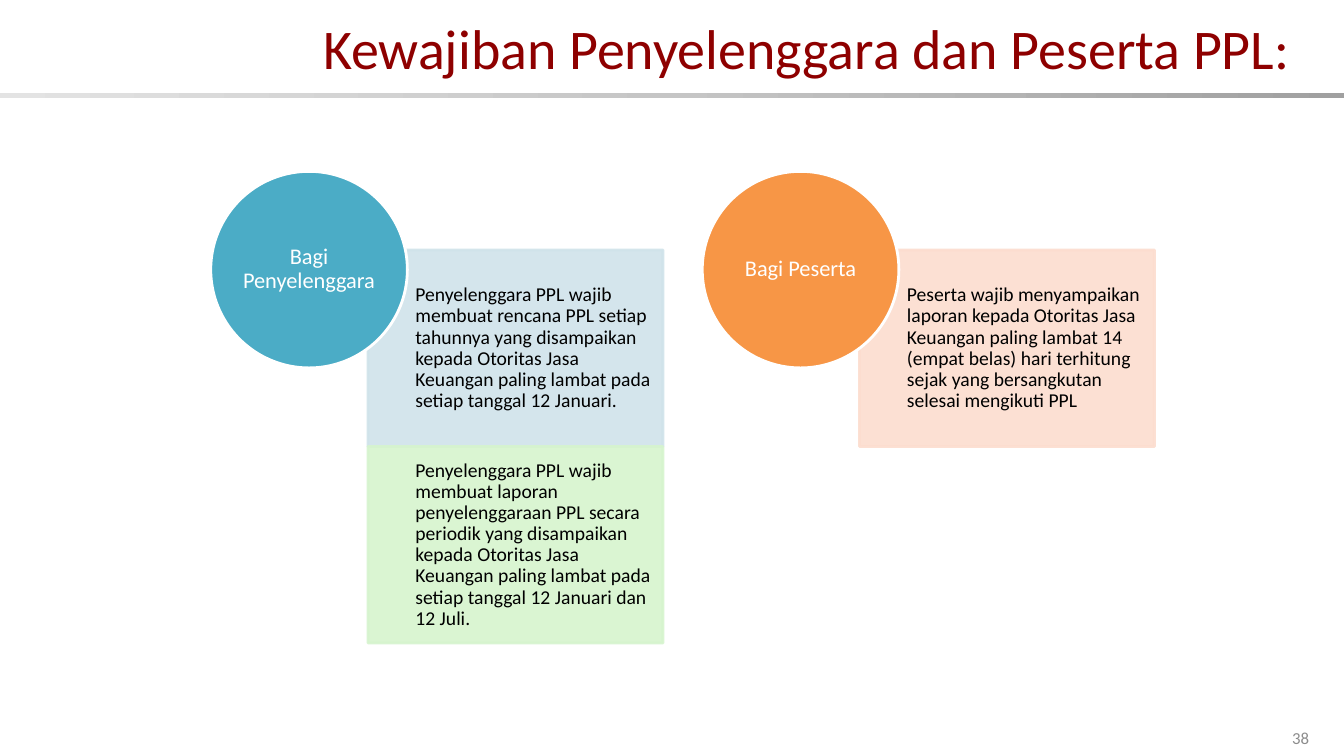
from pptx import Presentation
from pptx.dml.color import RGBColor
from pptx.enum.shapes import MSO_SHAPE
from pptx.enum.text import MSO_ANCHOR, PP_ALIGN
from pptx.oxml.ns import qn
from pptx.oxml.xmlchemy import OxmlElement
from pptx.util import Inches, Pt
from copy import deepcopy

RECTANGLE, OVAL = MSO_SHAPE.RECTANGLE, MSO_SHAPE.OVAL
LEFT, CENTER, RIGHT = PP_ALIGN.LEFT, PP_ALIGN.CENTER, PP_ALIGN.RIGHT
MIDDLE = MSO_ANCHOR.MIDDLE

COLORS = {
    "title": "8E0000", "body": "000000", "white": "FFFFFF", "number": "8C8C8C",
    "bar_dark": "A0A0A0", "bar_mid": "C5C5C5", "bar_light": "E3E3E3",
    "teal": "4BACC6", "orange": "F79646",
    "pale_blue": "D0E3EA", "pale_green": "D6F4CE", "pale_orange": "FCDDCF",
}

DUTIES = [
    ("Bagi Penyelenggara", "teal", [
        ("pale_blue", "Penyelenggara PPL wajib membuat rencana PPL setiap tahunnya yang "
         "disampaikan kepada Otoritas Jasa Keuangan paling lambat pada setiap tanggal "
         "12 Januari."),
        ("pale_green", "Penyelenggara PPL wajib membuat laporan penyelenggaraan PPL secara "
         "periodik yang disampaikan kepada Otoritas Jasa Keuangan paling lambat pada "
         "setiap tanggal 12 Januari dan 12 Juli."),
    ]),
    ("Bagi Peserta", "orange", [
        ("pale_orange", "Peserta wajib menyampaikan laporan kepada Otoritas Jasa Keuangan "
         "paling lambat 14 (empat belas) hari terhitung sejak yang bersangkutan selesai "
         "mengikuti PPL"),
    ]),
]


def color(name):
    return RGBColor.from_string(COLORS[name])


class DutyPage:
    font = "Calibri"
    cell = 1.95            # side of a grid cell, also the circle diameter
    origin = (2.09, 1.7)   # top left corner of the grid

    def __init__(self, deck):
        self.deck = deck
        self.page = deck.slides.add_slide(deck.slide_layouts[6])

    def percent(self, left, top, width, height):
        """Turn percentages of the slide into lengths."""
        across, down = self.deck.slide_width / 100, self.deck.slide_height / 100
        return [int(part) for part in
                (left * across, top * down, width * across, height * down)]

    def grid(self, column, row, columns, rows):
        """Turn grid columns and rows into lengths."""
        return [Inches(part) for part in (
            self.origin[0] + column * self.cell, self.origin[1] + row * self.cell,
            columns * self.cell, rows * self.cell)]

    def add_text(self, box, text, size, ink, align=LEFT, spacing=1.0, insets=None):
        frame = box.text_frame
        frame.word_wrap = True
        frame.vertical_anchor = MIDDLE
        if insets:
            (frame.margin_left, frame.margin_top,
             frame.margin_right, frame.margin_bottom) = map(Inches, insets)
        para = frame.paragraphs[0]
        para.alignment = align
        para.line_spacing = spacing
        span = para.add_run()
        span.text = text
        span.font.name, span.font.size = self.font, Pt(size)
        span.font.color.rgb = color(ink)

    def shape(self, kind, place, fill, line=None, opacity=100):
        box = self.page.shapes.add_shape(kind, *place)
        box.shadow.inherit = False
        box.fill.solid()
        box.fill.fore_color.rgb = color(fill)
        if line:
            box.line.color.rgb = color(line)
            box.line.width = Pt(2)
        else:
            box.line.fill.background()
        if opacity < 100:
            for paint in box._element.spPr.iter(qn("a:srgbClr")):
                alpha = OxmlElement("a:alpha")
                alpha.set("val", str(opacity * 1000))
                paint.append(alpha)
        return box

    def bar(self, place, stops):
        """Draw a strip shaded evenly through three colours, from right to left."""
        box = self.shape(RECTANGLE, place, stops[0])
        box.fill.gradient()
        box.fill.gradient_angle = 180
        first = box._element.spPr.find(".//" + qn("a:gs"))
        first.addnext(deepcopy(first))
        for index, (stop, name) in enumerate(zip(box.fill.gradient_stops, stops)):
            stop.position = index / 2
            stop.color.rgb = color(name)

    def title(self, place, text):
        box = self.page.shapes.add_textbox(*place)
        self.add_text(box, text, 40, "title", RIGHT)

    def panel(self, place, text, fill):
        box = self.shape(RECTANGLE, place, fill, fill, opacity=90)
        self.add_text(box, text, 14, "body", spacing=0.9, insets=(0.47, 0.11, 0.11, 0.11))

    def circle(self, place, text, fill):
        box = self.shape(OVAL, place, fill, "white")
        self.add_text(box, text, 16, "white", CENTER, 0.9, (0, 0, 0, 0))

    def number(self, place, text):
        self.add_text(self.shape(RECTANGLE, place, "white"), text, 12, "number", CENTER)


def main():
    deck = Presentation()
    deck.slide_width, deck.slide_height = Inches(13.33), Inches(7.5)
    sheet = DutyPage(deck)
    sheet.bar(sheet.percent(0, 12.3, 100, 0.7), ("bar_dark", "bar_mid", "bar_light"))
    sheet.title(sheet.percent(15.15, 2.27, 81.55, 7.87),
                "Kewajiban Penyelenggara dan Peserta PPL:")
    for group, (heading, fill, panels) in enumerate(DUTIES):
        column = group * 2.5
        for row, (tint, text) in enumerate(panels):
            sheet.panel(sheet.grid(column + 0.8, row + 0.4, 1.5, 1), text, tint)
        sheet.circle(sheet.grid(column, 0, 1, 1), heading, fill)
    sheet.number(sheet.percent(95.05, 94.67, 3.45, 5.87), "38")
    deck.save("out.pptx")


if __name__ == "__main__":
    main()
